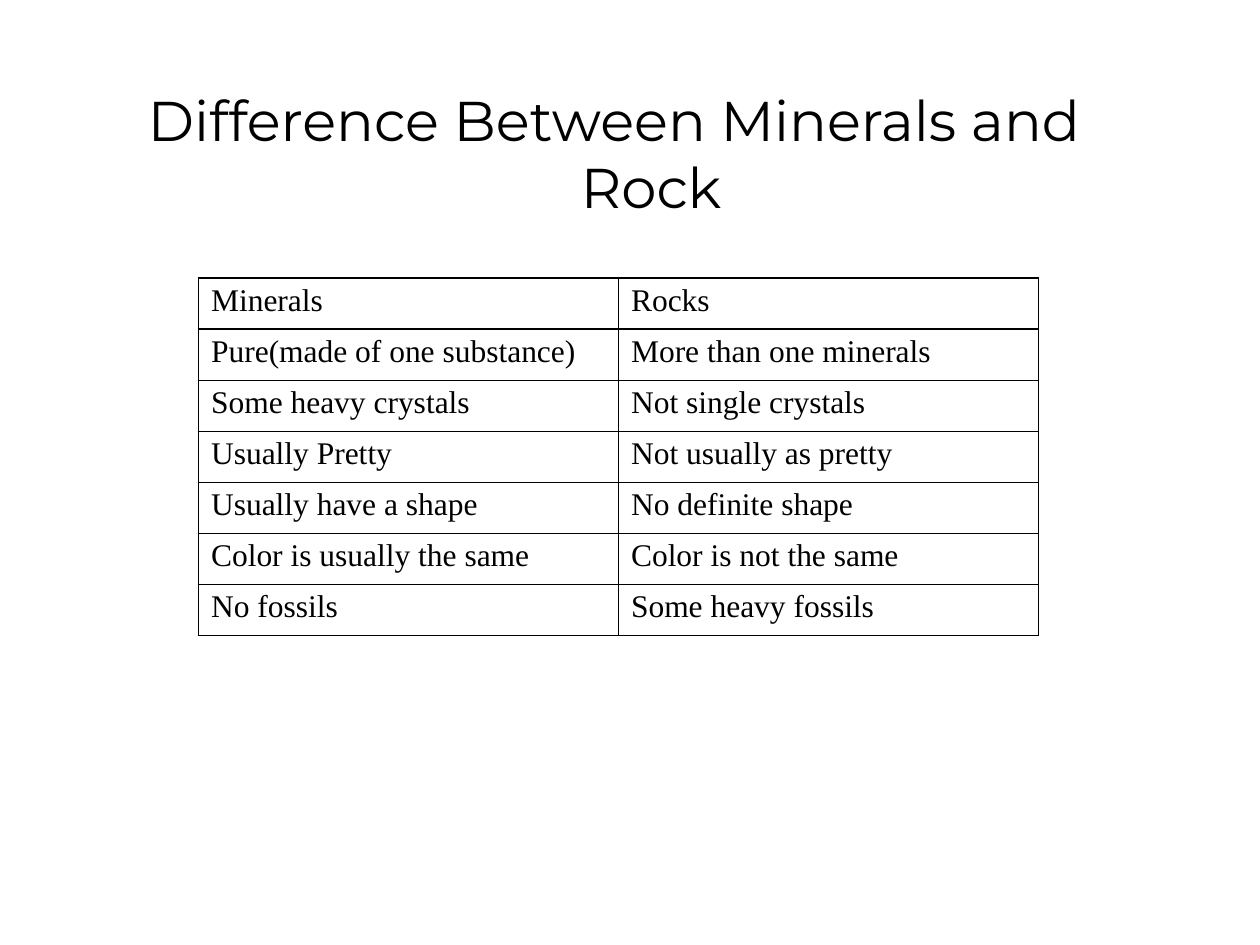
from lxml import etree
from pptx import Presentation
from pptx.dml.color import RGBColor
from pptx.enum.text import MSO_ANCHOR, MSO_AUTO_SIZE, PP_ALIGN
from pptx.oxml.ns import qn
from pptx.util import Pt

TOP, LEFT, NO_FIT = MSO_ANCHOR.TOP, PP_ALIGN.LEFT, MSO_AUTO_SIZE.NONE
COLORS = {"text": "000000", "border": "000000"}
TITLE_FONT, TABLE_FONT = "Montserrat", "Times New Roman"
TITLE_LAYOUT = 5

TITLE = "Difference Between Minerals and Rock"
ROWS = [
    ("Minerals", "Rocks"),
    ("Pure(made of one substance)", "More than one minerals"),
    ("Some heavy crystals", "Not single crystals"),
    ("Usually Pretty", "Not usually as pretty"),
    ("Usually have a shape", "No definite shape"),
    ("Color is usually the same", "Color is not the same"),
    ("No fossils", "Some heavy fossils"),
]


def add_run(p, text, font, size):
    r = p.add_run()
    r.text = text
    r.font.name = font
    r.font.size = Pt(size)
    r.font.color.rgb = RGBColor.from_string(COLORS["text"])


def set_indent(p, left, first=0):
    pPr = p._p.get_or_add_pPr()
    pPr.set("marL", str(Pt(left)))
    pPr.set("indent", str(Pt(first)))


def set_borders(cell, width):
    tcPr = cell._tc.get_or_add_tcPr()
    for side in ("lnL", "lnR", "lnT", "lnB"):
        ln = etree.SubElement(tcPr, qn(f"a:{side}"), w=str(Pt(width)))
        fill = etree.SubElement(ln, qn("a:solidFill"))
        etree.SubElement(fill, qn("a:srgbClr"), val=COLORS["border"])


def add_title(s, left, top, width, height):
    sp = s.shapes.title
    sp.left, sp.top, sp.width, sp.height = Pt(left), Pt(top), Pt(width), Pt(height)
    tf = sp.text_frame
    tf.word_wrap = True
    tf.auto_size = NO_FIT
    tf.vertical_anchor = TOP
    tf.margin_left = tf.margin_right = tf.margin_bottom = 0
    tf.margin_top = Pt(19.4)
    p = tf.paragraphs[0]
    p.alignment = LEFT
    p.space_before = Pt(0.9)
    # Hanging indent: the second line sits under the middle of the first
    set_indent(p, 291, -247.5)
    add_run(p, TITLE, TITLE_FONT, 32)


def fill_cell(cell, text):
    cell.margin_left = cell.margin_right = cell.margin_bottom = 0
    cell.margin_top = Pt(3)
    cell.vertical_anchor = TOP
    p = cell.text_frame.paragraphs[0]
    p.alignment = LEFT
    p.space_before = Pt(3)
    set_indent(p, 7.2)
    add_run(p, text, TABLE_FONT, 18)
    set_borders(cell, 1)
    cell.fill.background()


def add_comparison(s, left, top, width, height):
    n_rows, n_cols = len(ROWS), len(ROWS[0])
    table = s.shapes.add_table(
        n_rows, n_cols, Pt(left), Pt(top), Pt(width), Pt(height)).table
    table.first_row = table.horz_banding = False
    for col in table.columns:
        col.width = Pt(width / n_cols)
    for row, texts in zip(table.rows, ROWS):
        row.height = Pt(height / n_rows)
        for cell, text in zip(row.cells, texts):
            fill_cell(cell, text)


def main():
    prs = Presentation()
    prs.slide_width, prs.slide_height = Pt(720), Pt(540)
    s = prs.slides.add_slide(prs.slide_layouts[TITLE_LAYOUT])

    # Heading
    add_title(s, 41, 29.5, 638.6, 182)
    # Minerals against rocks
    add_comparison(s, 113.4, 158.9, 480, 204.4)

    prs.save("out.pptx")


if __name__ == "__main__":
    main()
